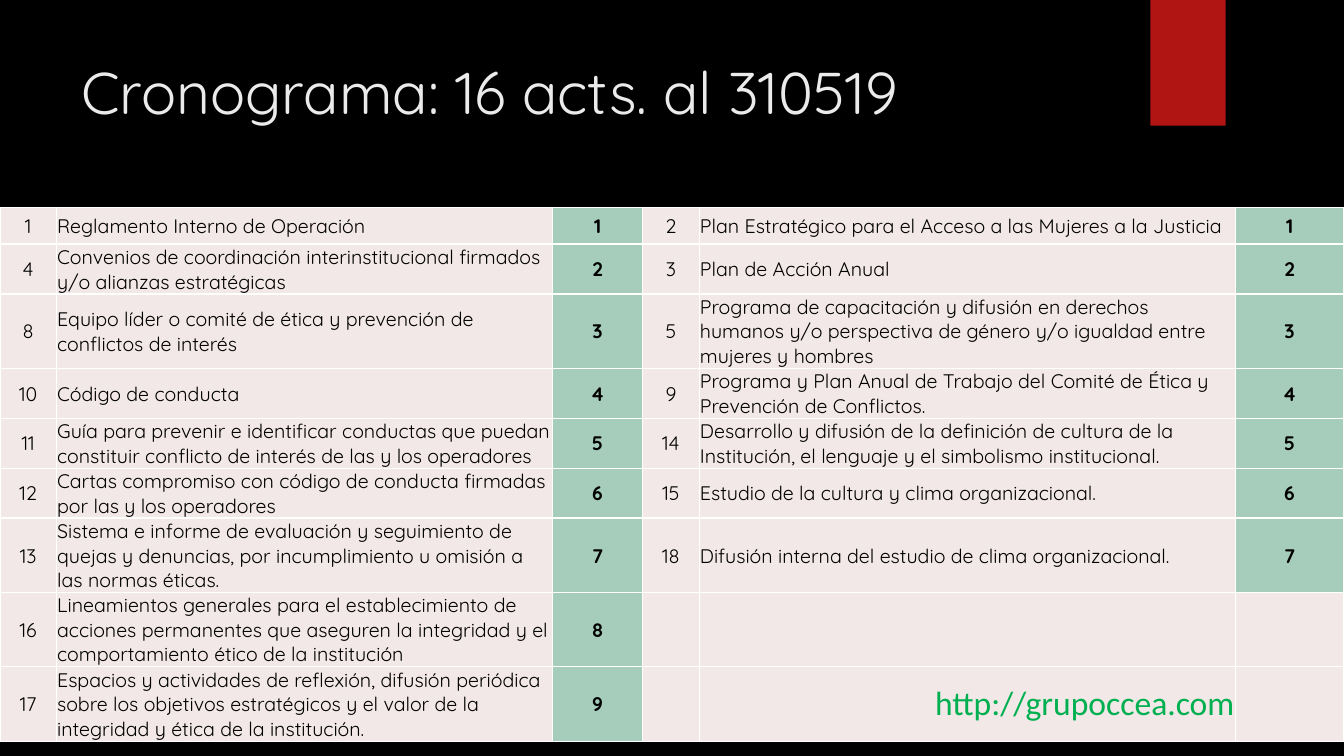
from itertools import zip_longest
from typing import NamedTuple

from lxml import etree
from pptx import Presentation
from pptx import util as u
from pptx.dml.color import RGBColor
from pptx.enum import shapes, text
from pptx.oxml import ns

BLACK = RGBColor(0x00, 0x00, 0x00)
WHITE = RGBColor(0xFF, 0xFF, 0xFF)
PALE = RGBColor(0xEB, 0xEB, 0xEB)
RED = RGBColor(0xB0, 0x15, 0x13)
ROSE = RGBColor(0xF2, 0xE8, 0xE7)
MINT = RGBColor(0xA6, 0xCD, 0xBC)
GREEN = RGBColor(0x00, 0xB0, 0x50)

LEFT, CENTER, RIGHT = (
    text.PP_ALIGN.LEFT, text.PP_ALIGN.CENTER, text.PP_ALIGN.RIGHT)
TITLE_FORMAT = {"name": "Quicksand", "size": u.Pt(42), "bold": False}
BODY_FORMAT = {"name": "Quicksand", "size": u.Pt(14), "bold": False}
COUNT_FORMAT = {**BODY_FORMAT, "bold": True}
LINK_FORMAT = {"name": "Calibri", "size": u.Pt(24), "bold": False}
CELL_FORMAT = {
    "margin_left": u.Cm(0.02),
    "margin_right": u.Cm(0.02),
    "margin_top": u.Cm(0.02),
    "margin_bottom": u.Cm(0),
    "vertical_anchor": text.MSO_ANCHOR.MIDDLE,
}
COLUMN_WIDTHS = (1.42, 12.5, 2.28, 1.42, 13.51, 2.74)
LINE_HEIGHTS = {1: 0.92, 2: 1.24, 3: 1.87}
ROW_LINES = (1, 2, 3, 2, 2, 2, 3, 3, 3)


class Activity(NamedTuple):
    number: int
    name: str


LEFT_ACTIVITIES = [
    Activity(1, "Reglamento Interno de Operación"),
    Activity(4, "Convenios de coordinación interinstitucional firmados y/o alianzas estratégicas"),
    Activity(8, "Equipo líder o comité de ética y prevención de conflictos de interés"),
    Activity(10, "Código de conducta"),
    Activity(11, "Guía para prevenir e identificar conductas que puedan constituir "
                 "conflicto de interés de las y los operadores"),
    Activity(12, "Cartas compromiso con código de conducta firmadas por las y los operadores"),
    Activity(13, "Sistema e informe de evaluación y seguimiento de quejas y denuncias, "
                 "por incumplimiento u omisión a las normas éticas."),
    Activity(16, "Lineamientos generales para el establecimiento de acciones permanentes "
                 "que aseguren la integridad y el comportamiento ético de la institución"),
    Activity(17, "Espacios y actividades de reflexión, difusión periódica sobre los objetivos "
                 "estratégicos y el valor de la integridad y ética de la institución."),
]
RIGHT_ACTIVITIES = [
    Activity(2, "Plan Estratégico para el Acceso a las Mujeres a la Justicia"),
    Activity(3, "Plan de Acción Anual"),
    Activity(5, "Programa de capacitación y difusión en derechos humanos y/o perspectiva "
                "de género y/o igualdad entre mujeres y hombres"),
    Activity(9, "Programa y Plan Anual de Trabajo del Comité de Ética y Prevención de Conflictos."),
    Activity(14, "Desarrollo y difusión de la definición de cultura de la Institución, "
                 "el lenguaje y el simbolismo institucional."),
    Activity(15, "Estudio de la cultura y clima organizacional."),
    Activity(18, "Difusión interna del estudio de clima organizacional."),
]


def apply_format(target, values: dict) -> None:
    for name, value in values.items():
        setattr(target, name, value)


def write(frame, words: str, values: dict, color: RGBColor, align) -> None:
    para = frame.paragraphs[0]
    para.alignment = align
    span = para.add_run()
    span.text = words
    apply_format(span.font, values)
    span.font.color.rgb = color


def draw_borders(cell) -> None:
    properties = cell._tc.get_or_add_tcPr()
    for index, side in enumerate(("a:lnL", "a:lnR", "a:lnT", "a:lnB")):
        line = etree.Element(ns.qn(side), w=str(u.Pt(1)))
        fill = etree.SubElement(line, ns.qn("a:solidFill"))
        etree.SubElement(fill, ns.qn("a:srgbClr"), val=str(WHITE))
        properties.insert(index, line)


def style_cell(cell) -> None:
    apply_format(cell, CELL_FORMAT)
    cell.fill.solid()
    cell.fill.fore_color.rgb = ROSE
    draw_borders(cell)


def write_activity(table, row: int, column: int, activity: Activity) -> None:
    number, name, count = (table.cell(row, column + step) for step in range(3))
    write(number.text_frame, str(activity.number), BODY_FORMAT, BLACK, CENTER)
    write(name.text_frame, activity.name, BODY_FORMAT, BLACK, LEFT)
    write(count.text_frame, str(row + 1), COUNT_FORMAT, BLACK, CENTER)
    count.fill.fore_color.rgb = MINT


def draw_title(page) -> None:
    box = page.shapes.title
    apply_format(box, {"left": u.Cm(1.8), "top": u.Cm(1.27),
                       "width": u.Cm(26.14), "height": u.Cm(3.89)})
    apply_format(box.text_frame, {"vertical_anchor": text.MSO_ANCHOR.TOP,
                                  "word_wrap": True,
                                  "auto_size": text.MSO_AUTO_SIZE.NONE})
    write(box.text_frame, "Cronograma: 16 acts. al 310519", TITLE_FORMAT, PALE, LEFT)
    box.text_frame.paragraphs[0].line_spacing = 1.0


def draw_ribbon(page) -> None:
    ribbon = page.shapes.add_shape(
        shapes.MSO_SHAPE.RECTANGLE, u.Cm(28.99), u.Cm(0), u.Cm(1.9), u.Cm(3.17))
    ribbon.shadow.inherit = False
    ribbon.fill.solid()
    ribbon.fill.fore_color.rgb = RED
    ribbon.line.fill.background()


def draw_schedule(page) -> None:
    heights = [LINE_HEIGHTS[lines] for lines in ROW_LINES]
    table = page.shapes.add_table(
        len(heights), len(COLUMN_WIDTHS), u.Cm(0), u.Cm(5.23),
        u.Cm(sum(COLUMN_WIDTHS)), u.Cm(sum(heights))).table
    apply_format(table, {"first_row": False, "horz_banding": False})
    for column, width in zip(table.columns, COLUMN_WIDTHS):
        column.width = u.Cm(width)
    for row, height in zip(table.rows, heights):
        row.height = u.Cm(height)
    for cell in table.iter_cells():
        style_cell(cell)
    for row, pair in enumerate(zip_longest(LEFT_ACTIVITIES, RIGHT_ACTIVITIES)):
        for column, activity in zip((0, 3), pair):
            if activity:
                write_activity(table, row, column, activity)
    write(table.cell(8, 4).text_frame, "http://grupoccea.com", LINK_FORMAT, GREEN, RIGHT)


def main() -> None:
    deck = Presentation()
    deck.slide_width, deck.slide_height = u.Cm(33.87), u.Cm(19.05)
    page = deck.slides.add_slide(deck.slide_layouts.get_by_name("Title Only"))
    page.background.fill.solid()
    page.background.fill.fore_color.rgb = BLACK
    draw_ribbon(page)
    draw_title(page)
    draw_schedule(page)
    deck.save("out.pptx")


if __name__ == "__main__":
    main()
